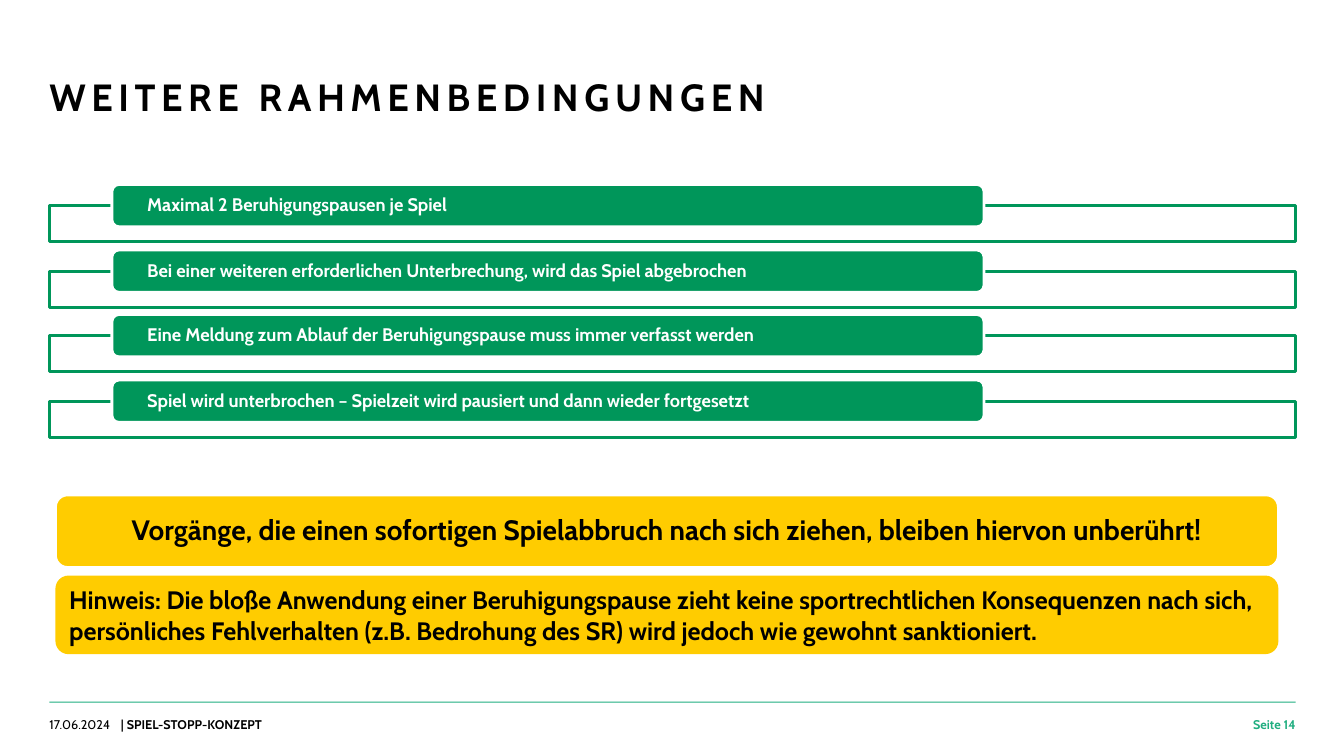
from pptx import Presentation, util as u
from pptx.dml.color import RGBColor
from pptx.enum import shapes, text

TITLE = "WEITERE RAHMENBEDINGUNGEN"
CONDITIONS = [
    "Maximal 2 Beruhigungspausen je Spiel",
    "Bei einer weiteren erforderlichen Unterbrechung, wird das Spiel abgebrochen",
    "Eine Meldung zum Ablauf der Beruhigungspause muss immer verfasst werden",
    "Spiel wird unterbrochen – Spielzeit wird pausiert und dann wieder fortgesetzt",
]
WARNING = "Vorgänge, die einen sofortigen Spielabbruch nach sich ziehen, bleiben hiervon unberührt!"
HINT = ("Hinweis: Die bloße Anwendung einer Beruhigungspause zieht keine sportrechtlichen "
        "Konsequenzen nach sich, persönliches Fehlverhalten (z.B. Bedrohung des SR) wird "
        "jedoch wie gewohnt sanktioniert.")

BLACK = RGBColor(0x00, 0x00, 0x00)
WHITE = RGBColor(0xFF, 0xFF, 0xFF)
GREEN = RGBColor(0x00, 0x96, 0x5A)
MINT = RGBColor(0x20, 0xAE, 0x80)
YELLOW = RGBColor(0xFF, 0xCC, 0x00)
FONT = "Cabin"
LEFT, RIGHT = text.PP_ALIGN.LEFT, text.PP_ALIGN.RIGHT
CENTER = text.PP_ALIGN.CENTER
RECT = shapes.MSO_SHAPE.RECTANGLE
ROUNDED = shapes.MSO_SHAPE.ROUNDED_RECTANGLE

# words, left, width, alignment, colour, bold
FOOTER = [
    ("17.06.2024", 49, 71, LEFT, BLACK, False),
    ("| SPIEL-STOPP-KONZEPT", 120, 1082, LEFT, BLACK, True),
    ("Seite 14", 1216, 69, RIGHT, MINT, True),
]
FOOTER_TOP, FOOTER_HEIGHT = 711, 15
MARGIN, CONTENT_WIDTH = 49, 1236
BAR_TOP, LAST_BAR_TOP, FRAME_DROP = 183, 377, 21


def px(length):
    """Turn px, at 100 to the inch, into EMU."""
    return u.Emu(length * 9144)


def place(*lengths):
    return [px(length) for length in lengths]


def add_block(page, kind, area, fill, line=None):
    block = page.shapes.add_shape(kind, *place(*area))
    block.shadow.inherit = False
    block.fill.solid()
    block.fill.fore_color.rgb = fill
    if line is None:
        block.line.fill.background()
    else:
        block.line.color.rgb = line
        block.line.width = u.Pt(2)
    return block


def write(box, words, size, color, bold=True, align=LEFT, insets=(0, 0), spacing=None,
          anchor=text.MSO_ANCHOR.MIDDLE):
    """Fill a box with one paragraph; insets are (sides, top and bottom)."""
    frame = box.text_frame
    frame.text = words
    frame.word_wrap = True
    frame.auto_size = text.MSO_AUTO_SIZE.NONE
    frame.vertical_anchor = anchor
    frame.margin_left = frame.margin_right = px(insets[0])
    frame.margin_top = frame.margin_bottom = px(insets[1])
    para = frame.paragraphs[0]
    para.alignment = align
    if spacing is not None:
        para.line_spacing = spacing
    span = para.runs[0]
    span.font.name = FONT
    span.font.size = u.Pt(size)
    span.font.bold = bold
    span.font.color.rgb = color
    return span


def add_title(page):
    title = page.shapes.title
    title.left, title.top, title.width, title.height = place(MARGIN, 78, 1106, 41)
    span = write(title, TITLE, 27, BLACK, spacing=u.Pt(29), anchor=text.MSO_ANCHOR.TOP)
    span.font._element.set("spc", "400")


def add_conditions(page):
    pitch = (LAST_BAR_TOP - BAR_TOP) / (len(CONDITIONS) - 1)
    for row, words in enumerate(CONDITIONS):
        top = BAR_TOP + round(row * pitch)
        add_block(page, RECT, (MARGIN, top + FRAME_DROP, CONTENT_WIDTH, 36), WHITE, GREEN)
        bar = add_block(page, ROUNDED, (111, top, 865, 42), GREEN, WHITE)
        write(bar, words, 13, WHITE, insets=(33, 0), spacing=0.9)


def add_notices(page):
    warning = add_block(page, ROUNDED, (55, 491, 1213, 72), YELLOW, WHITE)
    write(warning, WARNING, 20, BLACK, align=CENTER, insets=(9, 9), spacing=0.9)
    hint = add_block(page, ROUNDED, (55, 571, 1213, 78), YELLOW)
    write(hint, HINT, 18, BLACK, insets=(10, 5))


def add_footer(page):
    add_block(page, RECT, (MARGIN, 696, CONTENT_WIDTH, 1), MINT)
    for words, left, width, align, color, bold in FOOTER:
        box = page.shapes.add_textbox(*place(left, FOOTER_TOP, width, FOOTER_HEIGHT))
        write(box, words, 9, color, bold, align)


def main():
    deck = Presentation()
    deck.slide_width, deck.slide_height = place(1333, 750)
    page = deck.slides.add_slide(deck.slide_layouts[5])
    add_title(page)
    add_conditions(page)
    add_notices(page)
    add_footer(page)
    deck.save("out.pptx")


if __name__ == "__main__":
    main()
